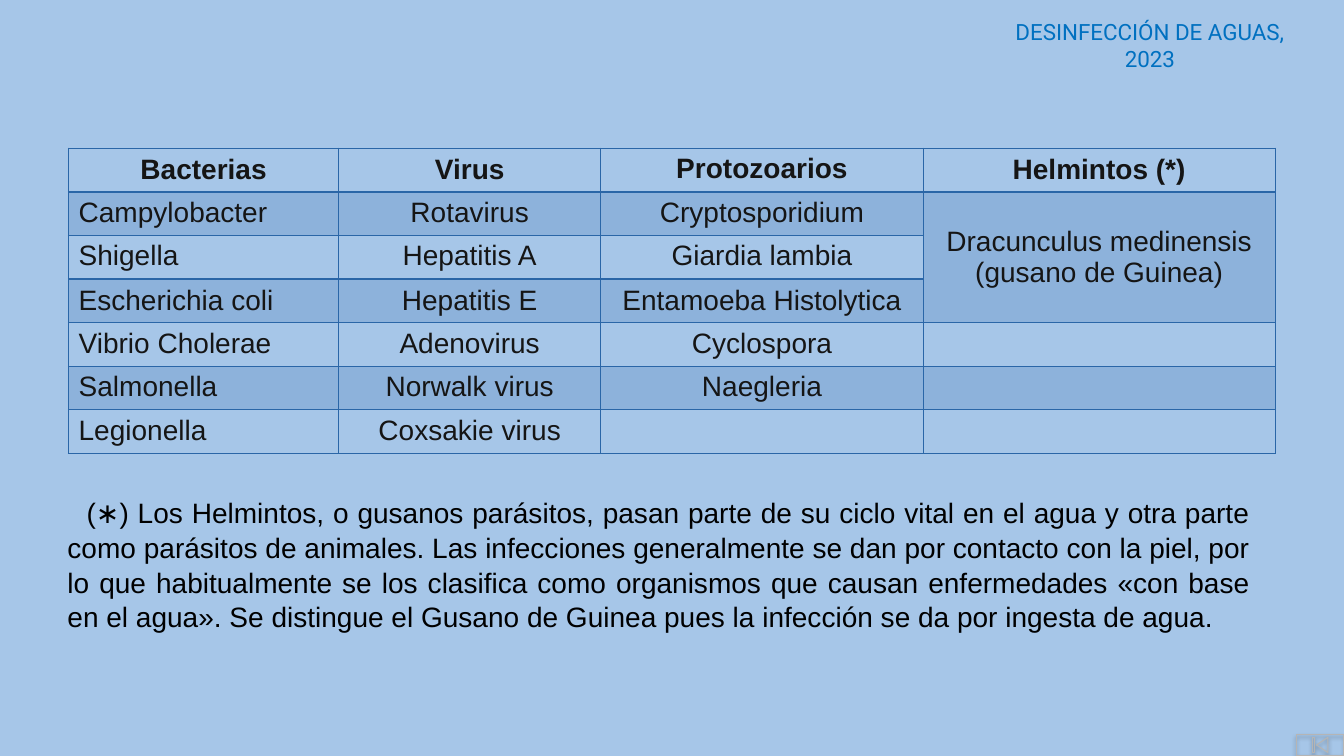
import lxml.etree
import pptx
import pptx.dml.color
import pptx.enum.shapes
import pptx.enum.text
import pptx.oxml
import pptx.oxml.ns
import pptx.util

THEME = {
    "background": "A6C6E8", "header": "0070C0", "grid": "2A66A7",
    "table_text": "151515", "note_text": "000000", "button": "B5B5B5",
    "header_size": 16, "text_size": 20, "font": "Arial", "header_font": "Roboto",
    "thin": 1, "thick": 2, "band_alpha": 20000,
}
ALIGN = pptx.enum.text.PP_ALIGN
ANCHOR = pptx.enum.text.MSO_ANCHOR
qn = pptx.oxml.ns.qn


def style(font, name, size, color, bold=False):
    font.name, font.size, font.bold = name, pptx.util.Pt(size), bold
    font.color.rgb = pptx.dml.color.RGBColor.from_string(color)


def box(left, top, width, height):
    """Turn hundredths of the slide's width and height into lengths."""
    return (round(left * column), round(top * row),
            round(width * column), round(height * row))


deck = pptx.Presentation()
deck.slide_width = pptx.util.Inches(13.33)
deck.slide_height = pptx.util.Inches(7.5)
column, row = deck.slide_width / 100, deck.slide_height / 100

slide = deck.slides.add_slide(deck.slide_layouts.get_by_name("Title Only"))
slide.background.fill.solid()
slide.background.fill.fore_color.rgb = pptx.dml.color.RGBColor.from_string(THEME["background"])

# Corner button
button = slide.shapes.add_shape(
    pptx.enum.shapes.MSO_SHAPE.ACTION_BUTTON_BEGINNING, *box(96.47, 97.2, 3.53, 2.67))
button.fill.background()
button.line.color.rgb = pptx.dml.color.RGBColor.from_string(THEME["button"])
button.line.width = pptx.util.Pt(0.75)
button.shadow.inherit = False
shadow = lxml.etree.SubElement(
    button._element.spPr.find(qn("a:effectLst")), qn("a:outerShdw"),
    blurRad=str(pptx.util.Pt(3.1)), dist=str(pptx.util.Pt(1.6)), dir="5400000")
shadow_color = lxml.etree.SubElement(shadow, qn("a:srgbClr"), val="000000")
lxml.etree.SubElement(shadow_color, qn("a:alpha"), val="38000")

# Running header
header = slide.shapes.title
header.left, header.top, header.width, header.height = box(73.67, 1.73, 23.78, 4.93)
header.text_frame.text = "DESINFECCIÓN DE AGUAS, 2023"
header.text_frame.word_wrap = True
header.text_frame.auto_size = pptx.enum.text.MSO_AUTO_SIZE.NONE
header.text_frame.vertical_anchor = ANCHOR.TOP
header_line = header.text_frame.paragraphs[0]
header_line.alignment = ALIGN.CENTER
style(header_line.font, THEME["header_font"], THEME["header_size"], THEME["header"])

# Table of pathogens
pathogens = [
    ["Bacterias", "Virus", "Protozoarios", "Helmintos (*)"],
    ["Campylobacter", "Rotavirus", "Cryptosporidium", "Dracunculus medinensis\n(gusano de Guinea)"],
    ["Shigella", "Hepatitis A", "Giardia lambia", ""],
    ["Escherichia coli", "Hepatitis E", "Entamoeba Histolytica", ""],
    ["Vibrio Cholerae", "Adenovirus", "Cyclospora", ""],
    ["Salmonella", "Norwalk virus", "Naegleria", ""],
    ["Legionella", "Coxsakie virus", "", ""],
]
column_widths = [20.1, 19.5, 24, 26.18]
row_height = 5.77
middle_cells = {(0, 0), (0, 1), (0, 3), (1, 3), (3, 0), (3, 1), (3, 2)}

table = slide.shapes.add_table(
    len(pathogens), len(column_widths),
    *box(5.1, 19.6, sum(column_widths), row_height * len(pathogens))).table
table.first_row = table.horz_banding = False
for table_column, width in zip(table.columns, column_widths):
    table_column.width = round(width * column)

for r, names in enumerate(pathogens):
    table.rows[r].height = round(row_height * row)
    for c, name in enumerate(names):
        cell = table.cell(r, c)
        cell.text = name
        cell.vertical_anchor = ANCHOR.MIDDLE if (r, c) in middle_cells else ANCHOR.TOP
        for line in cell.text_frame.paragraphs:
            line.alignment = ALIGN.LEFT if c == 0 and r > 0 else ALIGN.CENTER
            style(line.font, THEME["font"], THEME["text_size"], THEME["table_text"], bold=r == 0)

        properties = cell._tc.get_or_add_tcPr()
        for side in ("lnL", "lnR", "lnT", "lnB"):
            under_heading = (r, side) in ((0, "lnB"), (1, "lnT"))
            weight = THEME["thick"] if under_heading else THEME["thin"]
            border = lxml.etree.SubElement(
                properties, qn(f"a:{side}"), w=str(pptx.util.Pt(weight)))
            paint = lxml.etree.SubElement(border, qn("a:solidFill"))
            lxml.etree.SubElement(paint, qn("a:srgbClr"), val=THEME["grid"])

        if r % 2:
            cell.fill.solid()
            cell.fill.fore_color.rgb = pptx.dml.color.RGBColor.from_string(THEME["grid"])
            band = properties.find(qn("a:solidFill")).find(qn("a:srgbClr"))
            lxml.etree.SubElement(band, qn("a:alpha"), val=str(THEME["band_alpha"]))
        else:
            cell.fill.background()
table.cell(1, 3).merge(table.cell(3, 3))

# Note on the helminths
note = slide.shapes.add_textbox(*box(2.78, 64.67, 91, 19.73)).text_frame
note.word_wrap = True
note_text = note.paragraphs[0]
note_text.alignment = ALIGN.JUSTIFY
note_text.line_spacing = 1.04
note_text.space_after = pptx.util.Pt(16.5)
note_text._p.get_or_add_pPr().set("marL", str(round(1.5 * column)))
note_text._p.get_or_add_pPr().set("indent", str(round(1.43 * column)))
for words, font_name in [
    ("(", THEME["font"]),
    ("∗", THEME["header_font"]),
    (") Los Helmintos, o gusanos parásitos, pasan parte de su ciclo vital en el agua y otra "
     "parte como parásitos de animales. Las infecciones generalmente se dan por contacto con "
     "la piel, por lo que habitualmente se los clasifica como organismos que causan "
     "enfermedades «con base en el agua». Se distingue el Gusano de Guinea pues la infección "
     "se da por ingesta de agua.", THEME["font"]),
]:
    run = note_text.add_run()
    run.text = words
    style(run.font, font_name, THEME["text_size"], THEME["note_text"])

deck.save("out.pptx")
